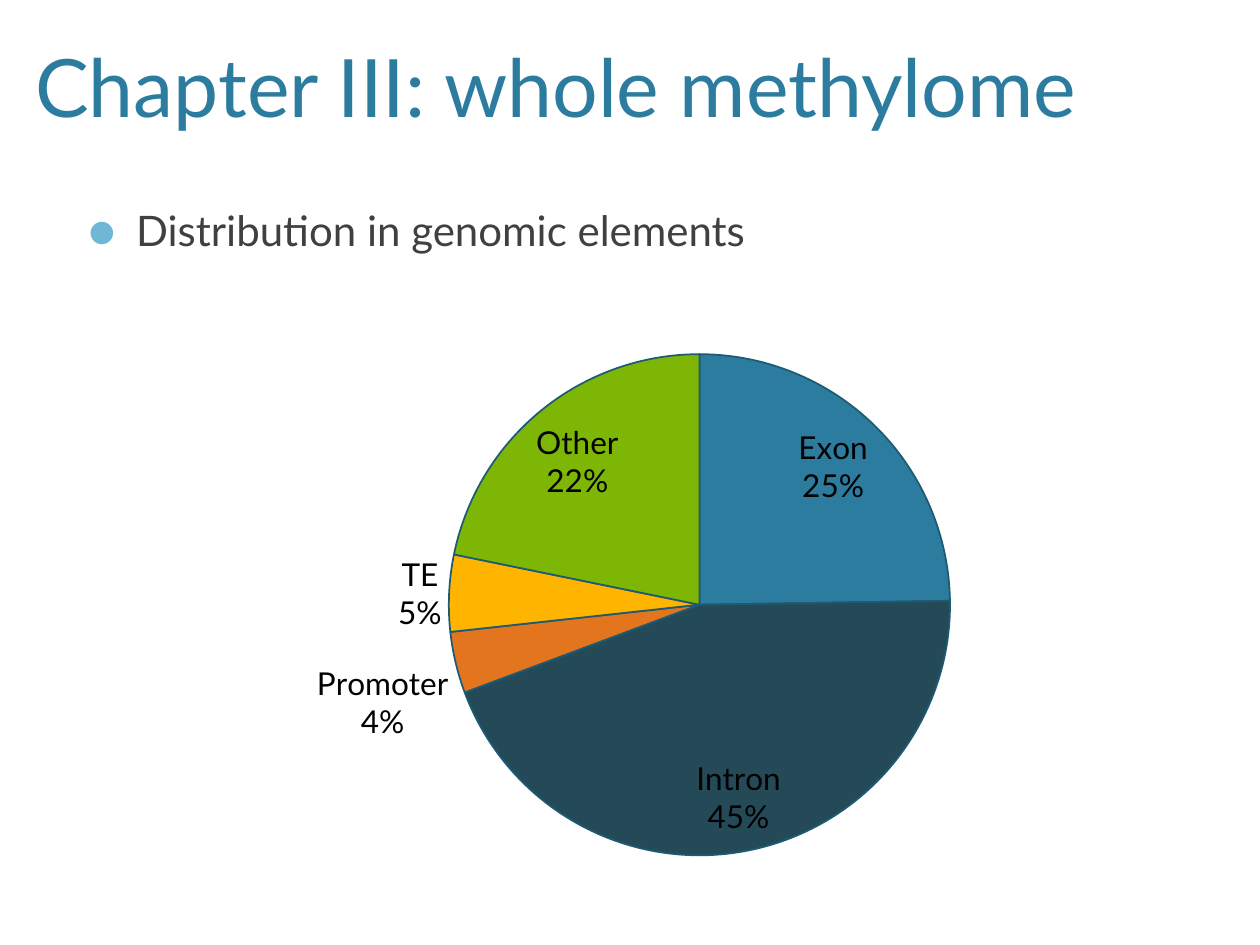
"""Build the slide on how the methylome is spread over genomic elements."""
from dataclasses import dataclass

from lxml.etree import SubElement
from pptx import Presentation
from pptx.chart.data import CategoryChartData
from pptx.dml.color import RGBColor
from pptx.enum.chart import XL_CHART_TYPE, XL_LABEL_POSITION
from pptx.enum.text import MSO_ANCHOR, MSO_AUTO_SIZE, PP_ALIGN
from pptx.oxml.ns import qn
from pptx.util import Inches, Pt

WIDTH, HEIGHT = Inches(10), Inches(7.5)
FONT = "Lato"
BLUE = "2C7C9F"


@dataclass(frozen=True)
class Box:
    """A rectangle in percent of the slide's width and height."""
    left: float
    top: float
    width: float
    height: float

    def place(self) -> dict:
        return {
            "left": int(WIDTH * self.left / 100),
            "top": int(HEIGHT * self.top / 100),
            "width": int(WIDTH * self.width / 100),
            "height": int(HEIGHT * self.height / 100),
        }


@dataclass(frozen=True)
class Element:
    """A genomic element with its share and slice colour."""
    name: str
    percent: int
    colour: str


ELEMENTS = (
    Element("Exon", 25, BLUE),
    Element("Intron", 45, "244A58"),
    Element("Promoter", 4, "E2751D"),
    Element("TE", 5, "FFB400"),
    Element("Other", 22, "7EB606"),
)


def rgb(colour: str) -> RGBColor:
    """Turn a hex string into a colour."""
    return RGBColor.from_string(colour)


def apply(target, values: dict) -> None:
    """Set every attribute in values on target."""
    for name, value in values.items():
        setattr(target, name, value)


def style_font(font, size: float, colour: str) -> None:
    """Give a font its face, size and colour."""
    apply(font, {"name": FONT, "size": Pt(size), "bold": False})
    font.color.rgb = rgb(colour)


def write(holder, box: Box, text: str, size: float, colour: str, anchor: MSO_ANCHOR):
    """Move a placeholder, write one line in it and return its paragraph."""
    apply(holder, box.place())
    frame = holder.text_frame
    apply(frame, {"word_wrap": True, "auto_size": MSO_AUTO_SIZE.NONE, "vertical_anchor": anchor})
    line = frame.paragraphs[0]
    line.alignment = PP_ALIGN.LEFT
    run = line.add_run()
    run.text = text
    style_font(run.font, size, colour)
    return line


def add_bullet(line, indent: float, colour: str) -> None:
    """Give a paragraph a round coloured bullet with a hanging indent."""
    line.space_before = Pt(20)
    properties = line._p.get_or_add_pPr()
    properties.set("marL", str(Inches(indent)))
    properties.set("indent", str(-Inches(indent)))
    SubElement(SubElement(properties, qn("a:buClr")), qn("a:srgbClr"), val=colour)
    SubElement(properties, qn("a:buSzPct"), val="110000")
    SubElement(properties, qn("a:buFont"), typeface=FONT)
    SubElement(properties, qn("a:buChar"), char="●")


def set_plot_area(chart, shares: dict) -> None:
    """Fix the pie's place as shares of the chart's size."""
    area = chart._chartSpace.chart.plotArea
    for old in area.findall(qn("c:layout")):
        area.remove(old)
    layout = SubElement(area, qn("c:layout"))
    area.insert(0, layout)
    manual = SubElement(layout, qn("c:manualLayout"))
    settings = {"layoutTarget": "inner", "xMode": "edge", "yMode": "edge", **shares}
    for name, value in settings.items():
        SubElement(manual, qn(f"c:{name}"), val=str(value))


def add_pie(slide, box: Box, elements: tuple[Element, ...]) -> None:
    """Draw the elements as a pie with name and percentage labels."""
    data = CategoryChartData()
    data.categories = [element.name for element in elements]
    data.add_series("Series 1", [element.percent for element in elements])
    chart = slide.shapes.add_chart(
        XL_CHART_TYPE.PIE, *box.place().values(), data
    ).chart
    apply(chart, {"has_legend": False, "has_title": False})
    style_font(chart.font, 18, "000000")
    set_plot_area(chart, {"x": 0.3, "y": 0.12, "w": 0.55, "h": 0.85})

    pie = chart.plots[0]
    apply(pie, {"vary_by_categories": True, "has_data_labels": True})
    labels = pie.data_labels
    apply(labels, {
        "show_category_name": True,
        "show_percentage": True,
        "show_value": False,
        "position": XL_LABEL_POSITION.BEST_FIT,
    })
    style_font(labels.font, 18, "000000")
    separator = SubElement(labels._element, qn("c:separator"))
    separator.text = "\n"
    labels._element.find(qn("c:showBubbleSize")).addnext(separator)

    for index, element in enumerate(elements):
        wedge = pie.series[0].points[index].format
        wedge.fill.solid()
        wedge.fill.fore_color.rgb = rgb(element.colour)
        wedge.line.color.rgb = rgb("1D5A74")
        wedge.line.width = Pt(1)


def main() -> None:
    """Build and save the slide."""
    deck = Presentation()
    apply(deck, {"slide_width": WIDTH, "slide_height": HEIGHT})
    slide = deck.slides.add_slide(deck.slide_layouts[1])
    title, body = slide.placeholders
    write(title, Box(1.8, -4.67, 92.5, 19.47), "Chapter III: whole methylome",
          46, BLUE, MSO_ANCHOR.BOTTOM)
    topic = write(body, Box(6, 20.93, 88, 63.33), "Distribution in genomic elements",
                  24, "404040", MSO_ANCHOR.TOP)
    add_bullet(topic, 0.38, "6FB7D7")
    add_pie(slide, Box(13.6, 30, 72.9, 62.4), ELEMENTS)
    deck.save("out.pptx")


if __name__ == "__main__":
    main()
